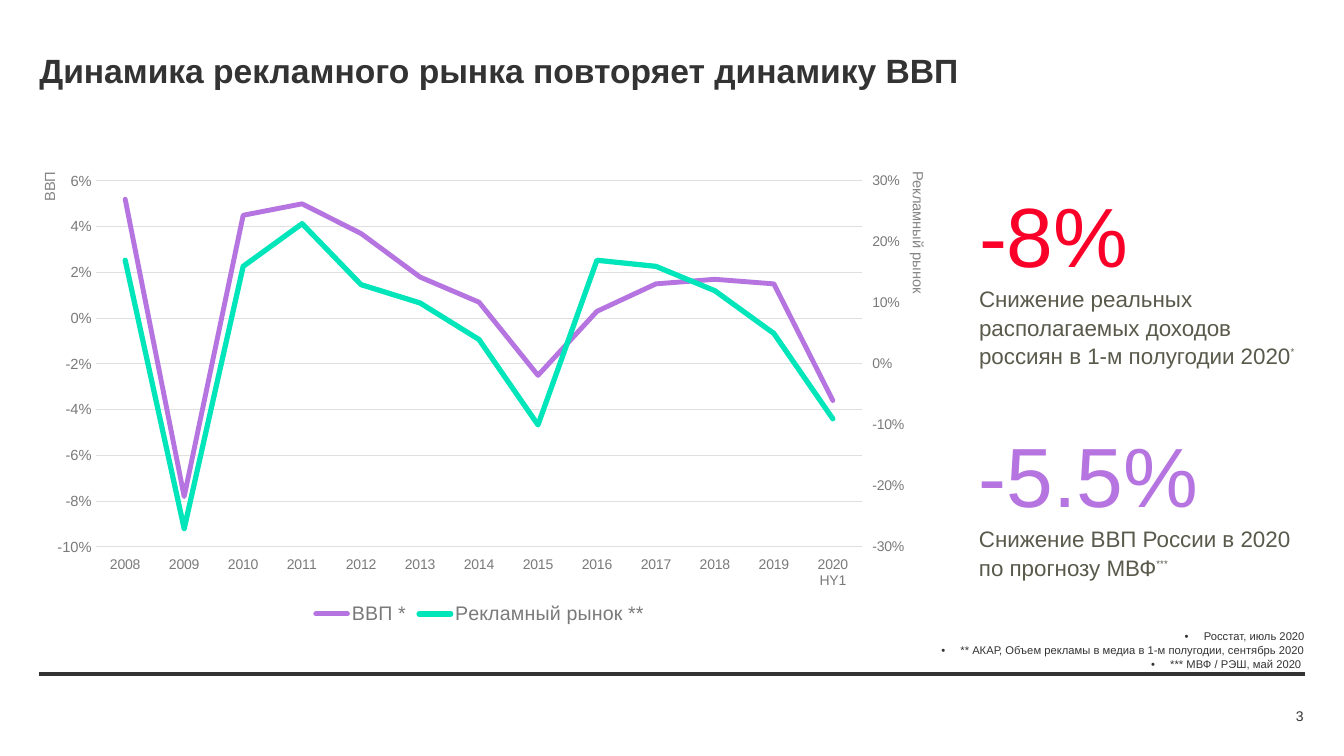
from copy import deepcopy

from lxml.etree import SubElement
from pptx import Presentation
from pptx.chart.data import CategoryChartData
from pptx.dml.color import RGBColor
from pptx.enum.chart import XL_CHART_TYPE, XL_LEGEND_POSITION, XL_TICK_LABEL_POSITION, XL_TICK_MARK
from pptx.enum.shapes import MSO_CONNECTOR
from pptx.enum.text import MSO_ANCHOR, PP_ALIGN
from pptx.oxml.ns import qn
from pptx.util import Inches, Pt

FONT = "Arial"
DARK = RGBColor(0x33, 0x33, 0x33)
BODY = RGBColor(0x5A, 0x5A, 0x4C)
AXIS = RGBColor(0x7A, 0x7A, 0x7A)
AXIS_TITLE = RGBColor(0x85, 0x85, 0x85)
GRID = RGBColor(0xE0, 0xE0, 0xE0)
RED = RGBColor(0xFA, 0x00, 0x28)
PURPLE = RGBColor(0xB5, 0x74, 0xDF)
GREEN = RGBColor(0x00, 0xE5, 0xBA)

YEARS = [str(year) for year in range(2008, 2020)] + ["2020 HY1"]
GDP = [0.052, -0.078, 0.045, 0.05, 0.037, 0.018, 0.007, -0.025, 0.003, 0.015, 0.017, 0.015, -0.036]
ADVERTISING = [0.17, -0.27, 0.16, 0.23, 0.13, 0.1, 0.04, -0.1, 0.17, 0.16, 0.12, 0.05, -0.09]
FOOTNOTES = [
    "Росстат, июль 2020",
    "** АКАР, Объем рекламы в медиа в 1-м полугодии, сентябрь 2020",
    "*** МВФ / РЭШ, май 2020 ",
]


def set_font(font, size, color, bold=False):
    """Apply the deck font with a size and colour."""
    font.name, font.size, font.bold = FONT, Pt(size), bold
    font.color.rgb = color


def prepare_frame(frame, anchor=MSO_ANCHOR.TOP):
    """Remove the insets of a text frame and let it wrap."""
    frame.margin_left = frame.margin_right = frame.margin_top = frame.margin_bottom = 0
    frame.word_wrap = True
    frame.vertical_anchor = anchor
    return frame


def add_frame(page, left, top, width, height, anchor=MSO_ANCHOR.TOP):
    """Add a text box and return its frame."""
    box = page.shapes.add_textbox(Inches(left), Inches(top), Inches(width), Inches(height))
    return prepare_frame(box.text_frame, anchor)


def add_span(para, text, size, color, bold=False):
    """Add one formatted run to a paragraph."""
    span = para.add_run()
    span.text = text
    set_font(span.font, size, color, bold)
    return span


def add_title(page, text, left, top, width, height):
    """Place and fill the title placeholder."""
    title = page.shapes.title
    title.left, title.top = Inches(left), Inches(top)
    title.width, title.height = Inches(width), Inches(height)
    para = prepare_frame(title.text_frame, MSO_ANCHOR.MIDDLE).paragraphs[0]
    para.alignment = PP_ALIGN.LEFT
    add_span(para, text, 24, DARK, True)


def add_key_figure(page, figure, color, lines, mark, left, top, width, height):
    """Add a large figure with its caption and superscript footnote mark."""
    frame = add_frame(page, left, top, width, height)
    para = frame.paragraphs[0]
    para.line_spacing = 1.05
    add_span(para, figure, 60, color)
    for line in lines:
        para = frame.add_paragraph()
        para.line_spacing = 1.05
        add_span(para, line, 16, BODY)
    span = add_span(para, mark, 12, BODY)
    span.font._element.set("baseline", "50000")


def add_axis_title(page, text, direction, left, top, width, height):
    """Add a rotated axis title."""
    frame = add_frame(page, left, top, width, height)
    frame._txBody.bodyPr.set("vert", direction)
    add_span(frame.paragraphs[0], text, 10.5, AXIS_TITLE)


def add_footnotes(page, left, top, width, height):
    """Add the right-aligned bulleted sources."""
    frame = add_frame(page, left, top, width, height)
    for index, note in enumerate(FOOTNOTES):
        para = frame.add_paragraph() if index else frame.paragraphs[0]
        para.alignment = PP_ALIGN.RIGHT
        para.line_spacing = 1.05
        properties = para._p.get_or_add_pPr()
        properties.set("marL", str(Inches(0.19)))
        properties.set("indent", str(-Inches(0.19)))
        SubElement(properties, qn("a:buFont")).set("typeface", FONT)
        SubElement(properties, qn("a:buChar")).set("char", "•")
        add_span(para, note, 8, DARK)


def add_footer(page, left, top, width):
    """Add the bottom rule and the page number under it."""
    rule = page.shapes.add_connector(
        MSO_CONNECTOR.STRAIGHT, Inches(left), Inches(top), Inches(left + width), Inches(top))
    rule.line.color.rgb = DARK
    rule.line.width = Pt(3)
    SubElement(rule._element.spPr, qn("a:effectLst"))
    para = add_frame(page, left + width - 1.07, top + 0.3, 1.06, 0.22, MSO_ANCHOR.MIDDLE).paragraphs[0]
    para.alignment = PP_ALIGN.RIGHT
    add_span(para, "3", 10, DARK)


def set_values(element, **values):
    """Set the val attribute of named chart descendants."""
    for name, value in values.items():
        element.find(".//" + qn("c:" + name)).set("val", value)


def format_axes(chart):
    """Format the category axis and the left value axis."""
    years, gdp = chart.category_axis, chart.value_axis
    for axis, size in ((years, 10), (gdp, 10.5)):
        axis.major_tick_mark = axis.minor_tick_mark = XL_TICK_MARK.NONE
        set_font(axis.tick_labels.font, size, AXIS)
    years.tick_label_position = XL_TICK_LABEL_POSITION.LOW
    gdp.minimum_scale, gdp.maximum_scale, gdp.major_unit = -0.1, 0.06, 0.02
    gdp.tick_labels.number_format = "0%"
    gdp.tick_labels.number_format_is_linked = False
    gdp.format.line.fill.background()
    for line in (years.format.line, gdp.major_gridlines.format.line):
        line.color.rgb = GRID
        line.width = Pt(0.75)
    element = gdp._element
    for between in element.findall(qn("c:crossBetween")):
        element.remove(between)
    between = SubElement(element, qn("c:crossBetween"))
    between.set("val", "between")
    element.find(qn("c:crosses")).addnext(between)


def add_right_axis(plot_area):
    """Move the second series to its own plot with a right value axis."""
    left_plot = plot_area.find(qn("c:lineChart"))
    right_plot = deepcopy(left_plot)
    left_plot.remove(left_plot.findall(qn("c:ser"))[1])
    right_plot.remove(right_plot.findall(qn("c:ser"))[0])
    left_plot.addnext(right_plot)
    for reference, number in zip(right_plot.findall(qn("c:axId")), ("5001", "5002")):
        reference.set("val", number)
    years = deepcopy(plot_area.find(qn("c:catAx")))
    left_axis = plot_area.find(qn("c:valAx"))
    market = deepcopy(left_axis)
    set_values(years, axId="5001", crossAx="5002", delete="1")
    set_values(market, axId="5002", crossAx="5001", axPos="r", crosses="max",
               min="-0.3", max="0.3", majorUnit="0.1", majorTickMark="out")
    market.remove(market.find(qn("c:majorGridlines")))
    market.find(".//" + qn("a:defRPr")).set("sz", "1000")
    left_axis.addnext(market)
    market.addnext(years)


def set_plot_layout(plot_area, **edges):
    """Fix the inner plot area as fractions of the chart."""
    for layout in plot_area.findall(qn("c:layout")):
        plot_area.remove(layout)
    layout = SubElement(plot_area, qn("c:layout"))
    plot_area.insert(0, layout)
    manual = SubElement(layout, qn("c:manualLayout"))
    settings = {"layoutTarget": "inner", "xMode": "edge", "yMode": "edge", **edges}
    for name, value in settings.items():
        SubElement(manual, qn("c:" + name)).set("val", str(value))


def add_dynamics_chart(page, left, top, width, height):
    """Add the two-axis line chart with its axis titles."""
    data = CategoryChartData(number_format="0%")
    data.categories = YEARS
    data.add_series("ВВП *", GDP)
    data.add_series("Рекламный рынок **", ADVERTISING)
    chart = page.shapes.add_chart(
        XL_CHART_TYPE.LINE, Inches(left), Inches(top), Inches(width), Inches(height), data).chart
    set_font(chart.font, 10, DARK)
    chart.has_title = False
    chart.has_legend = True
    chart.legend.position = XL_LEGEND_POSITION.BOTTOM
    chart.legend.include_in_layout = False
    set_font(chart.legend.font, 14, AXIS)
    chart.plots[0].vary_by_categories = False
    for series, color, weight in zip(chart.plots[0].series, (PURPLE, GREEN), (3.5, 3.75)):
        series.smooth = False
        series.format.line.color.rgb = color
        series.format.line.width = Pt(weight)
        series._element.find(".//" + qn("a:ln")).set("cap", "rnd")
    format_axes(chart)
    plot_area = chart._chartSpace.chart.plotArea
    add_right_axis(plot_area)
    set_plot_layout(plot_area, x=0.064, y=0.038, w=0.87, h=0.786)
    add_axis_title(page, "Рекламный рынок", "vert", left + 8.63, top + 0.08, 0.18, 1.67)
    add_axis_title(page, "ВВП", "vert270", left + 0.01, top - 0.39, 0.18, 0.77)


def main():
    """Build and save the slide."""
    deck = Presentation()
    deck.slide_width, deck.slide_height = Inches(13.33), Inches(7.5)
    page = deck.slides.add_slide(deck.slide_layouts[5])
    add_title(page, "Динамика рекламного рынка повторяет динамику ВВП", 0.39, 0.47, 12.54, 0.44)
    add_dynamics_chart(page, 0.39, 1.62, 8.74, 4.62)
    add_key_figure(page, "-8%", RED, ["Снижение реальных", "располагаемых доходов",
                   "россиян в 1-м полугодии 2020"], "*", 9.71, 1.77, 3.22, 1.82)
    add_key_figure(page, "-5.5%", PURPLE, ["Снижение ВВП России в 2020 по прогнозу МВФ"],
                   "***", 9.71, 4.15, 3.23, 1.55)
    add_footnotes(page, 0.4, 6.24, 12.54, 0.4)
    add_footer(page, 0.39, 6.69, 12.55)
    deck.save("out.pptx")


if __name__ == "__main__":
    main()
